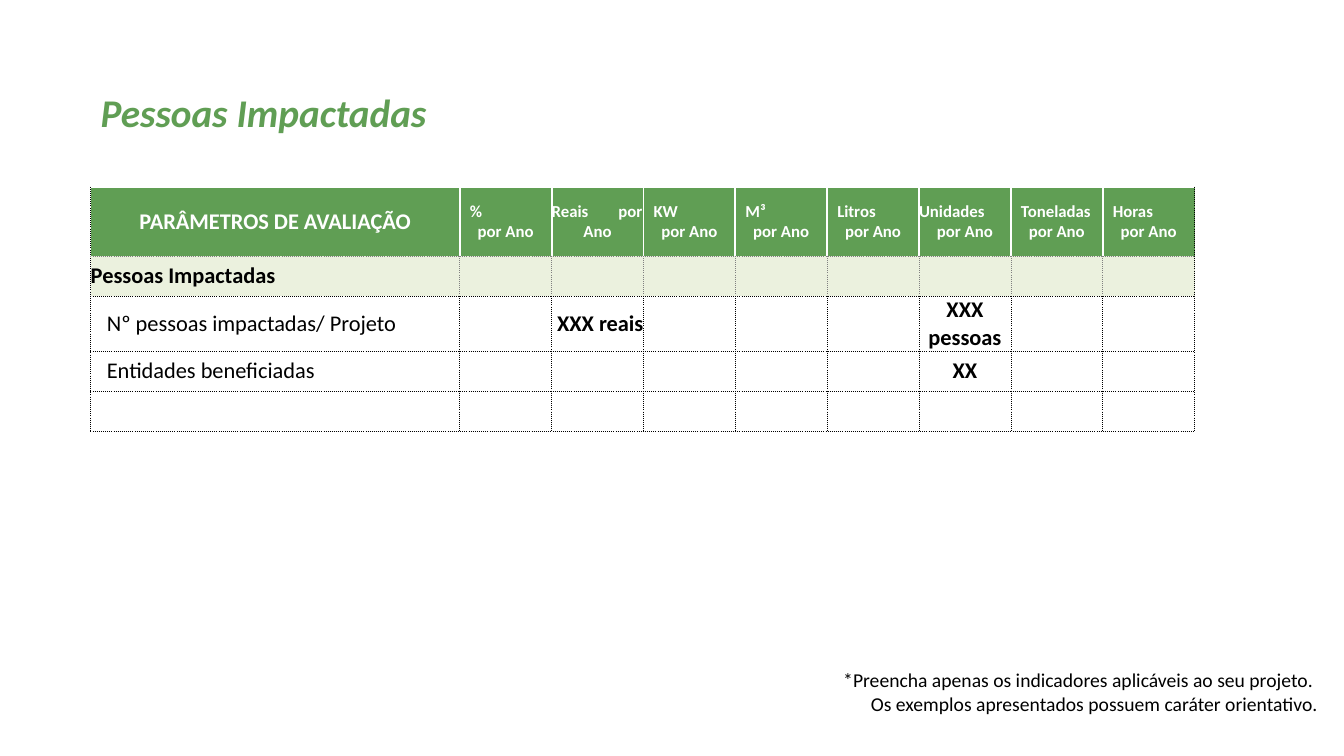
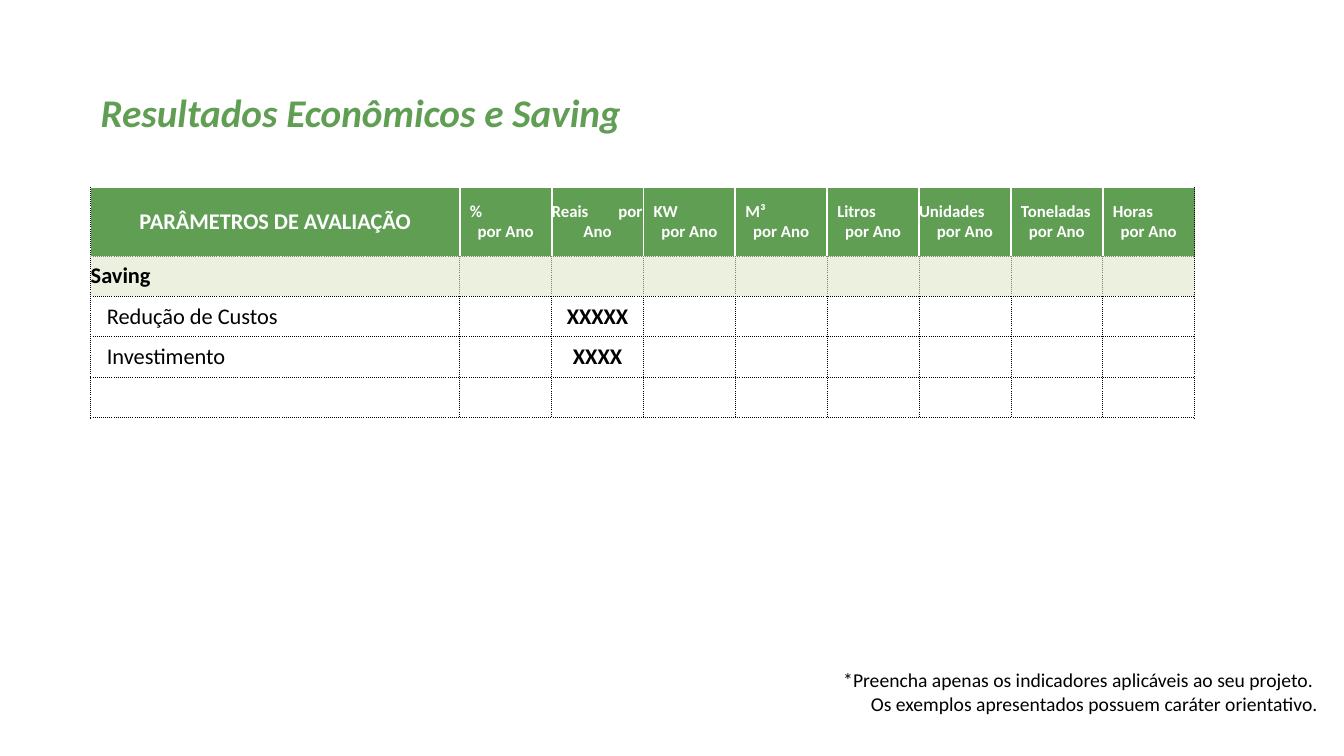
"""Builds two slides with project evaluation tables."""
import pptx
import pptx.dml.color
import pptx.enum.text
import pptx.oxml
import pptx.oxml.ns
import pptx.util

Inches = pptx.util.Inches
Pt = pptx.util.Pt
RGBColor = pptx.dml.color.RGBColor
Align = pptx.enum.text.PP_ALIGN

GREEN = RGBColor(0x60, 0x9E, 0x54)
PALE_GREEN = RGBColor(0xEB, 0xF1, 0xDE)
WHITE = RGBColor(0xFF, 0xFF, 0xFF)
GRAY = RGBColor(0x80, 0x80, 0x80)
BLACK = RGBColor(0x00, 0x00, 0x00)
FONT = "Calibri"

TABLE_WIDTH = 10.95
LABEL_WIDTH = 3.66
HEADER_HEIGHT = 0.68
ROW_HEIGHT = 0.4
TALL_ROW_HEIGHT = 0.54
UNITS = ["%\npor Ano", "Reais\tpor\nAno", "KW\npor Ano", "M³\npor Ano", "Litros\npor Ano",
         "Unidades\npor Ano", "Toneladas\npor Ano", "Horas\npor Ano"]
FLUSH_UNITS = ("Reais", "Unidades")
HEADER = ["PARÂMETROS DE AVALIAÇÃO"] + UNITS
NOTE = ("*Preencha apenas os indicadores aplicáveis ao seu projeto. \n"
        "Os exemplos apresentados possuem caráter orientativo.")

SLIDES = [
    {"title": "Pessoas Impactadas",
     "labels": ["Pessoas Impactadas", "Nº pessoas impactadas/ Projeto", "Entidades beneficiadas", ""],
     "values": {(2, 2): "XXX reais", (2, 6): "XXX pessoas", (3, 6): "XX"},
     "tall_row": 2},
    {"title": "Resultados Econômicos e Saving",
     "labels": ["Saving", "Redução de Custos", "Investimento", ""],
     "values": {(2, 2): "XXXXX", (3, 2): "XXXX"},
     "tall_row": None},
]


def add_text(text_frame, text, size, color, bold=False, italic=False, align=Align.LEFT):
    """Fill a text frame and format every run in it."""
    text_frame.text = text
    text_frame.word_wrap = True
    for paragraph in text_frame.paragraphs:
        paragraph.alignment = align
        for run in paragraph.runs:
            run.font.name = FONT
            run.font.size = Pt(size)
            run.font.color.rgb = color
            run.font.bold = bold
            run.font.italic = italic


def set_borders(cell, borders):
    """Draw the borders, ordered left, right, top, bottom; white is solid, the rest dotted."""
    properties = cell._tc.get_or_add_tcPr()
    for position, (side, color) in enumerate(zip("LRTB", borders)):
        width, dash = (Pt(1.5), "solid") if color == WHITE else (Pt(0.5), "sysDot")
        properties.insert(position, pptx.oxml.parse_xml(
            f'<a:ln{side} {pptx.oxml.ns.nsdecls("a")} w="{width}">'
            f'<a:solidFill><a:srgbClr val="{color}"/></a:solidFill>'
            f'<a:prstDash val="{dash}"/></a:ln{side}>'))


presentation = pptx.Presentation()
presentation.slide_width = Inches(13.33)
presentation.slide_height = Inches(7.5)

for content in SLIDES:
    slide = presentation.slides.add_slide(presentation.slide_layouts[6])
    row_count, column_count = len(content["labels"]) + 1, len(HEADER)
    table = slide.shapes.add_table(row_count, column_count, Inches(0.9), Inches(1.86),
                                   Inches(TABLE_WIDTH), Inches(2.26)).table
    table.horz_banding = False
    table.first_row = False

    for index, column in enumerate(table.columns):
        unit_width = (TABLE_WIDTH - LABEL_WIDTH) / len(UNITS)
        column.width = Inches(unit_width if index else LABEL_WIDTH)
    for index, row in enumerate(table.rows):
        row.height = Inches(ROW_HEIGHT if index else HEADER_HEIGHT)
    if content["tall_row"]:
        table.rows[content["tall_row"]].height = Inches(TALL_ROW_HEIGHT)

    for row in range(row_count):
        fill = {0: GREEN, 1: PALE_GREEN}.get(row, WHITE)
        inner = {0: WHITE, 1: GRAY}.get(row, BLACK)
        bottom = BLACK if row else GRAY
        for column in range(column_count):
            cell = table.cell(row, column)
            cell.vertical_anchor = pptx.enum.text.MSO_ANCHOR.MIDDLE
            cell.margin_left = cell.margin_right = cell.margin_top = cell.margin_bottom = 0
            cell.fill.solid()
            cell.fill.fore_color.rgb = fill
            left = inner if column else BLACK
            right = inner if column < column_count - 1 else BLACK
            set_borders(cell, [left, right, inner, bottom])

            if row == 0:
                add_text(cell.text_frame, HEADER[column], 12 if column else 16, WHITE,
                         bold=True, align=Align.CENTER)
                if column:
                    unit = cell.text_frame.paragraphs[0]
                    unit.alignment = Align.LEFT
                    unit_properties = unit._p.get_or_add_pPr()
                    if not unit.text.startswith(FLUSH_UNITS):
                        unit_properties.set("marL", str(Inches(0.1)))
                    if "\t" in unit.text:
                        unit_properties.append(pptx.oxml.parse_xml(
                            f'<a:tabLst {pptx.oxml.ns.nsdecls("a")}>'
                            f'<a:tab pos="{Inches(0.9)}" algn="r"/></a:tabLst>'))
            elif column == 0:
                cell.margin_left = Inches(0.16 if row > 1 else 0)
                add_text(cell.text_frame, content["labels"][row - 1], 16, BLACK, bold=row == 1)
            elif (row, column) in content["values"]:
                value = content["values"][row, column]
                align = Align.RIGHT if value.endswith("reais") else Align.CENTER
                add_text(cell.text_frame, value, 16, BLACK, bold=True, align=align)

    title = slide.shapes.add_textbox(Inches(0.9), Inches(0.76), Inches(10.79), Inches(0.61))
    add_text(title.text_frame, content["title"], 28, GREEN, bold=True, italic=True)
    title.text_frame.paragraphs[0].line_spacing = 1.15

    note = slide.shapes.add_textbox(Inches(6.5), Inches(6.58), Inches(6.67), Inches(0.57))
    add_text(note.text_frame, NOTE, 14, BLACK, align=Align.RIGHT)

presentation.save("out.pptx")
